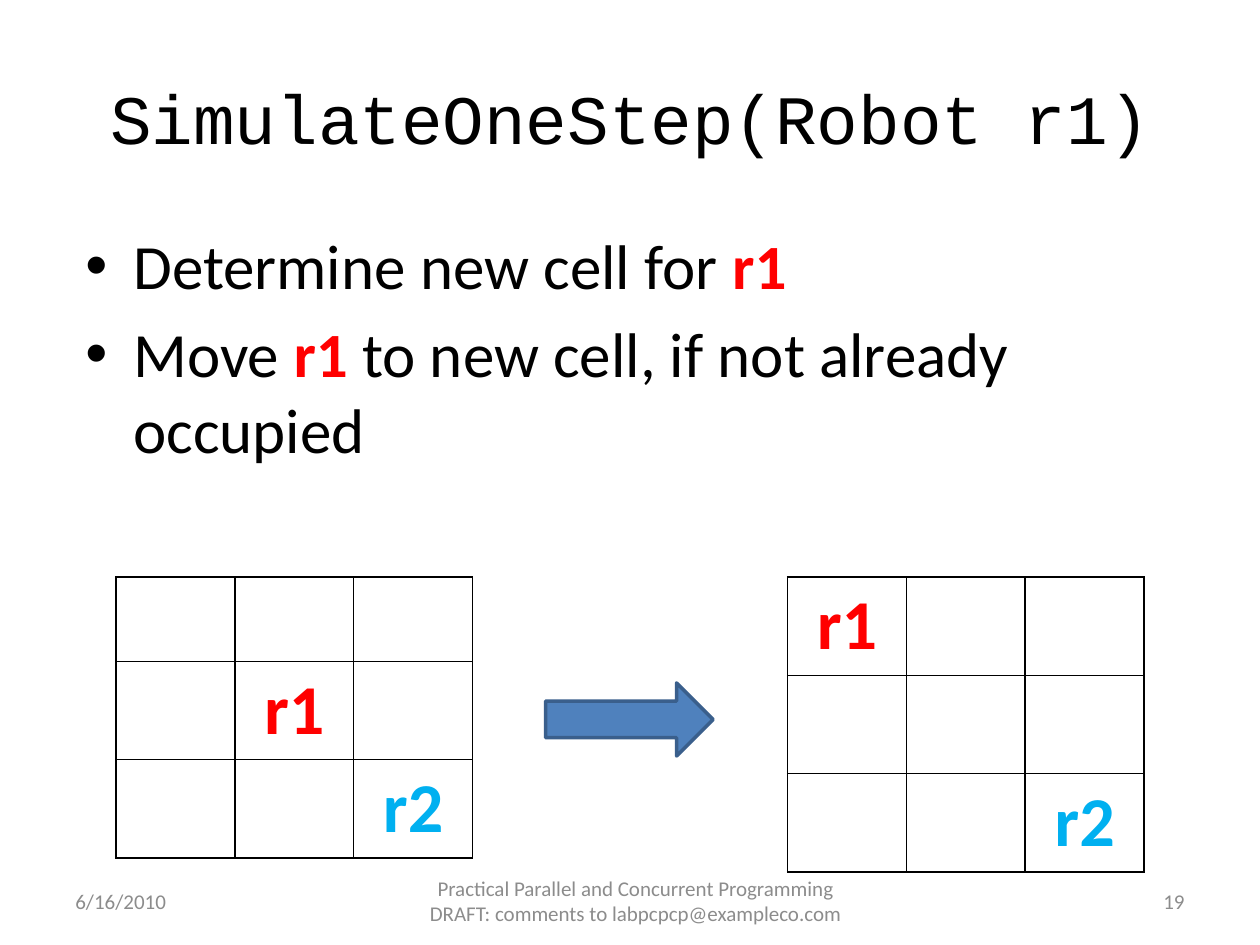
from typing import NamedTuple

from lxml.etree import SubElement
from pptx import Presentation
from pptx.dml.color import RGBColor
from pptx.enum.shapes import MSO_SHAPE
from pptx.enum.text import MSO_ANCHOR, PP_ALIGN
from pptx.oxml.ns import qn
from pptx.util import Inches, Pt

BLACK = RGBColor(0x00, 0x00, 0x00)
RED = RGBColor(0xFF, 0x00, 0x00)
SKY = RGBColor(0x00, 0xB0, 0xF0)
GRAY = RGBColor(0x8C, 0x8C, 0x8C)
BLUE = RGBColor(0x4F, 0x81, 0xBD)
DARK_BLUE = RGBColor(0x3A, 0x5F, 0x8C)

ROBOT_COLORS = {"r1": RED, "r2": SKY}
GRID_SIZE = 3
GRID_TOP = 4.58
GRID_WIDTH = 2.83


class Label(NamedTuple):
    text: str
    left: float
    top: float
    width: float
    height: float
    size: float
    color: RGBColor
    align: PP_ALIGN
    font: str = "Calibri"


class Grid(NamedTuple):
    left: float
    row_heights: tuple[float, ...]
    robots: dict[tuple[int, int], str]


LABELS = (
    Label("SimulateOneStep(Robot r1)", 0.5, 0.3, 9, 1.25, 39.6, BLACK,
          PP_ALIGN.CENTER, "Courier New"),
    Label("6/16/2010", 0.5, 6.95, 2.33, 0.4, 12, GRAY, PP_ALIGN.LEFT),
    Label("Practical Parallel and Concurrent Programming "
          "DRAFT: comments to labpcpcp@exampleco.com",
          3.17, 6.95, 3.75, 0.4, 12, GRAY, PP_ALIGN.CENTER),
    Label("19", 7.17, 6.95, 2.33, 0.4, 12, GRAY, PP_ALIGN.RIGHT),
)

STEPS = (
    ("Determine new cell for ", "r1"),
    ("Move ", "r1", " to new cell, if not already occupied"),
)

GRIDS = (
    Grid(0.92, (0.67, 0.78, 0.78), {(1, 1): "r1", (2, 2): "r2"}),
    Grid(6.25, (0.78, 0.78, 0.78), {(0, 0): "r1", (2, 2): "r2"}),
)


def add_label(slide, label: Label) -> None:
    box = slide.shapes.add_textbox(Inches(label.left), Inches(label.top),
                                   Inches(label.width), Inches(label.height))
    frame = box.text_frame
    frame.word_wrap = True
    frame.vertical_anchor = MSO_ANCHOR.MIDDLE
    paragraph = frame.paragraphs[0]
    paragraph.text = label.text
    paragraph.alignment = label.align
    paragraph.font.name = label.font
    paragraph.font.size = Pt(label.size)
    paragraph.font.color.rgb = label.color


def set_bullet(paragraph) -> None:
    properties = paragraph._p.get_or_add_pPr()
    properties.set("marL", str(Inches(0.38)))
    properties.set("indent", str(-Inches(0.38)))
    SubElement(properties, qn("a:buFont"), typeface="Arial")
    SubElement(properties, qn("a:buChar"), char="•")


def add_steps(slide) -> None:
    box = slide.shapes.add_textbox(Inches(0.58), Inches(1.75),
                                   Inches(8.83), Inches(1.95))
    frame = box.text_frame
    frame.word_wrap = True
    for index, step in enumerate(STEPS):
        paragraph = frame.add_paragraph() if index else frame.paragraphs[0]
        paragraph.space_before = Pt(7.2)
        paragraph.font.name = "Calibri"
        paragraph.font.size = Pt(36)
        set_bullet(paragraph)
        for part in step:
            run = paragraph.add_run()
            run.text = part
            run.font.bold = part in ROBOT_COLORS
            run.font.color.rgb = ROBOT_COLORS.get(part, BLACK)


def set_borders(cell) -> None:
    """Draw a thin black line on all four sides, then leave the cell unfilled."""
    properties = cell._tc.get_or_add_tcPr()
    for side in ("a:lnL", "a:lnR", "a:lnT", "a:lnB"):
        line = SubElement(properties, qn(side), w=str(Pt(1)))
        fill = SubElement(line, qn("a:solidFill"))
        SubElement(fill, qn("a:srgbClr"), val=str(BLACK))
    cell.fill.background()


def add_grid(slide, grid: Grid) -> None:
    table = slide.shapes.add_table(
        GRID_SIZE, GRID_SIZE, Inches(grid.left), Inches(GRID_TOP),
        Inches(GRID_WIDTH), Inches(sum(grid.row_heights))).table
    table.first_row = False
    table.horz_banding = False
    for row, height in enumerate(grid.row_heights):
        table.rows[row].height = Inches(height)
        for column in range(GRID_SIZE):
            cell = table.cell(row, column)
            set_borders(cell)
            robot = grid.robots.get((row, column))
            if robot:
                paragraph = cell.text_frame.paragraphs[0]
                paragraph.text = robot
                paragraph.alignment = PP_ALIGN.CENTER
                paragraph.font.name = "Calibri"
                paragraph.font.size = Pt(40)
                paragraph.font.bold = True
                paragraph.font.color.rgb = ROBOT_COLORS[robot]


def add_move_arrow(slide) -> None:
    arrow = slide.shapes.add_shape(MSO_SHAPE.RIGHT_ARROW, Inches(4.33),
                                   Inches(5.42), Inches(1.33), Inches(0.58))
    arrow.shadow.inherit = False
    arrow.fill.solid()
    arrow.fill.fore_color.rgb = BLUE
    arrow.line.color.rgb = DARK_BLUE
    arrow.line.width = Pt(2)


def main() -> None:
    presentation = Presentation()
    presentation.slide_width = Inches(10)
    presentation.slide_height = Inches(7.5)
    slide = presentation.slides.add_slide(presentation.slide_layouts[6])
    for label in LABELS:
        add_label(slide, label)
    add_steps(slide)
    for grid in GRIDS:
        add_grid(slide, grid)
    add_move_arrow(slide)
    presentation.save("out.pptx")


if __name__ == "__main__":
    main()
